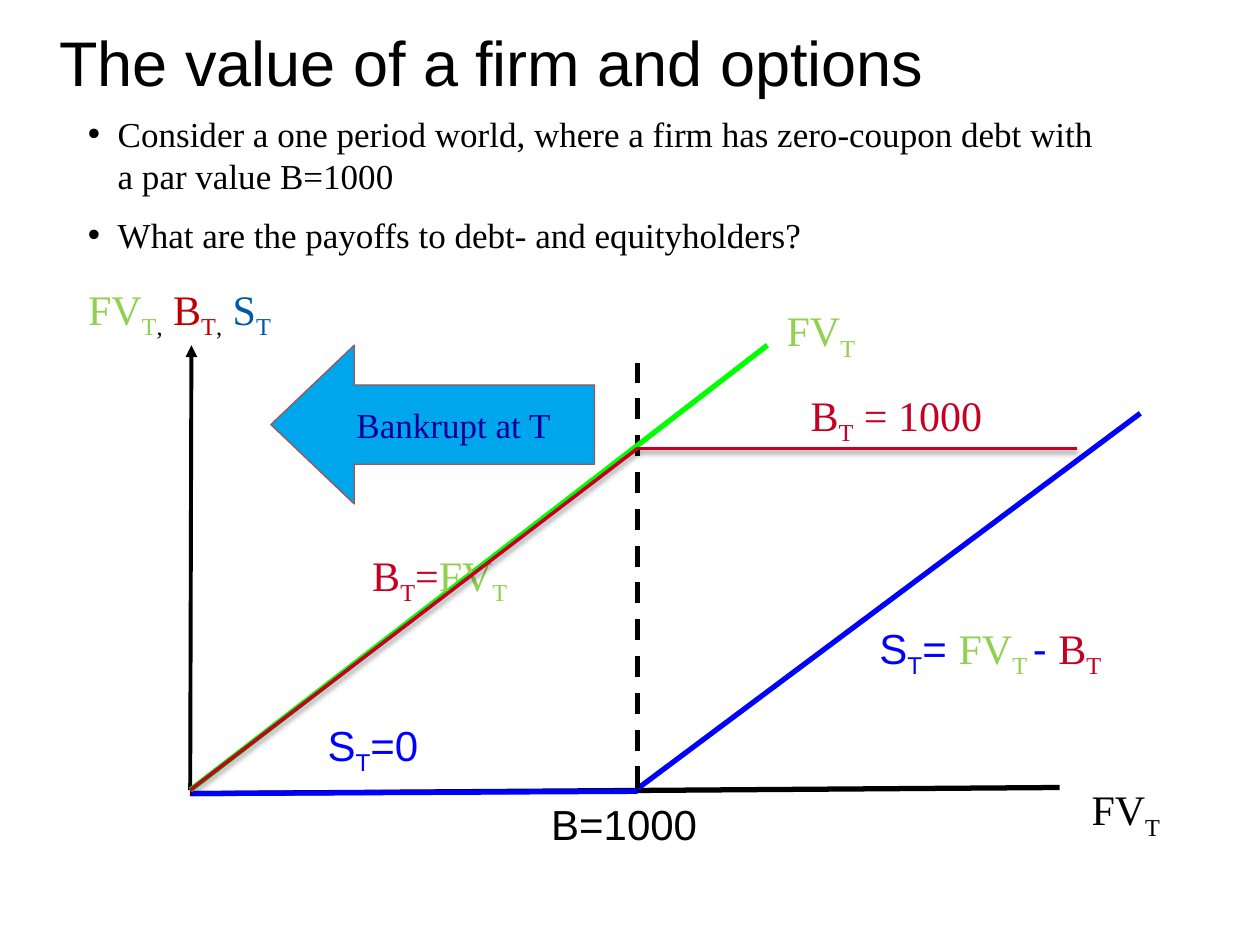
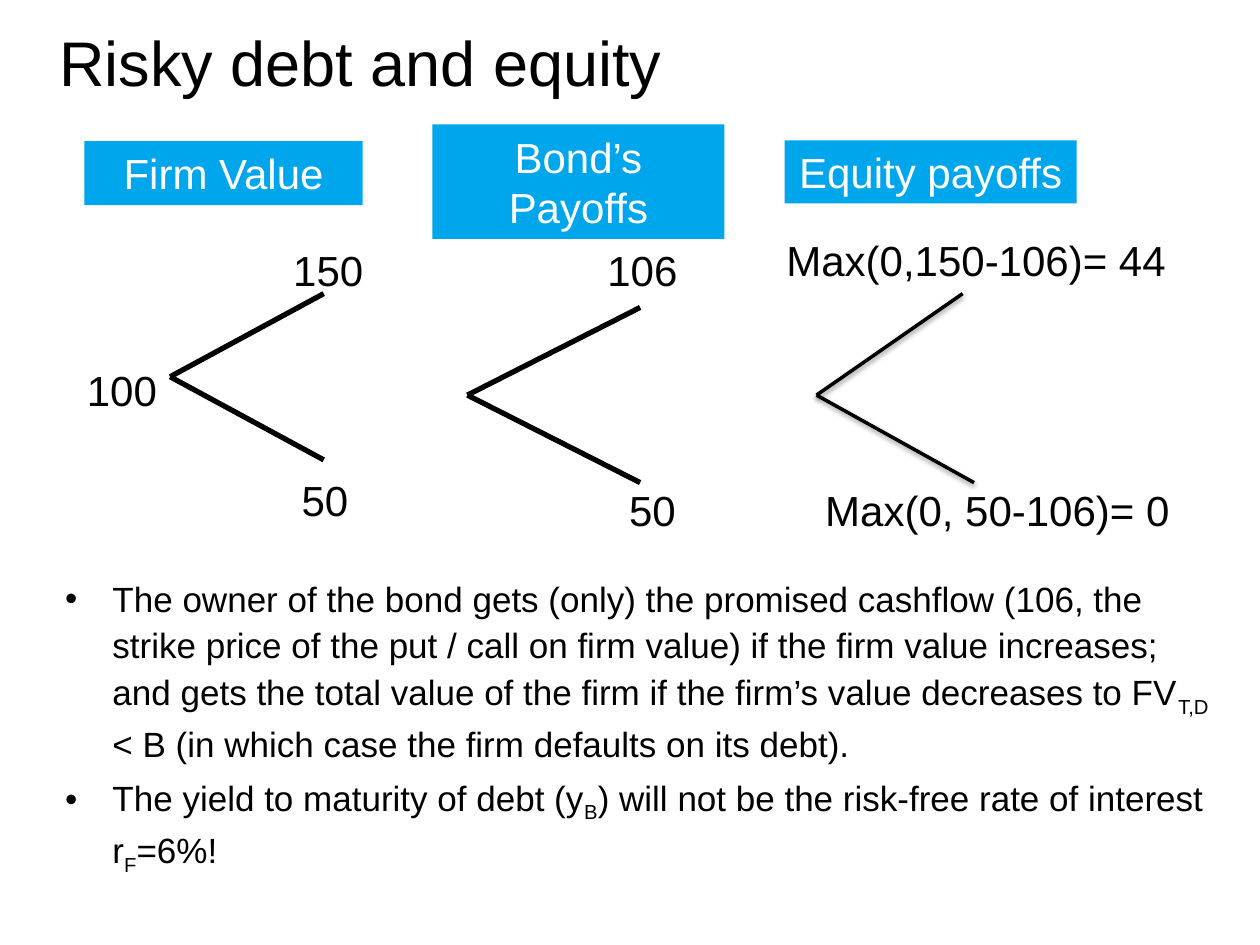
from lxml import etree
from pptx import Presentation
from pptx.dml.color import RGBColor
from pptx.enum import dml, shapes, text
from pptx.oxml.ns import qn
from pptx.util import Pt

HUES = {"ink": "000000", "paper": "FFFFFF", "sky": "00A6EB", "navy": "000099",
        "blue": "0000FF", "green": "00FF00", "lime": "92D050", "red": "C60023",
        "brick": "C00000", "steel": "005AA9", "rust": "A45355"}
SANS, SERIF = "Arial", "Times New Roman"
TITLE = (26.6, 9.4, 657.4, 51.8)


def hue(name):
    return RGBColor.from_string(HUES[name])


def style(font, size, face, color):
    font.size, font.name = Pt(size), face
    font.color.rgb = hue(color)


def write(para, parts, size):
    """Fill a paragraph from (text, colour, font) parts; text between bars is subscript."""
    for words, color, face in parts:
        for i, bit in enumerate(words.split("|")):
            if bit:
                run = para.add_run()
                run.text = bit
                style(run.font, size, face, color)
                if i % 2:
                    run._r.get_or_add_rPr().set("baseline", "-25000")


def label(slide, x, y, w, *parts):
    frame = slide.shapes.add_textbox(Pt(x), Pt(y), Pt(w), Pt(36)).text_frame
    frame.word_wrap = False
    para = frame.paragraphs[0]
    para.alignment = text.PP_ALIGN.CENTER
    write(para, parts, 24)


def block(slide, kind, box, words, size, face, color):
    shape = slide.shapes.add_shape(kind, *map(Pt, box))
    shape.shadow.inherit = False
    shape.fill.solid()
    shape.fill.fore_color.rgb = hue("sky")
    shape.line.fill.background()
    frame = shape.text_frame
    frame.text = words
    frame.vertical_anchor = text.MSO_ANCHOR.MIDDLE
    para = frame.paragraphs[0]
    para.alignment = text.PP_ALIGN.CENTER
    style(para.runs[0].font, size, face, color)
    return shape


def line(slide, x, y, start, end, color="ink", width=3, shade=False):
    """Draw a line between two points given relative to (x, y)."""
    wire = slide.shapes.add_connector(
        shapes.MSO_CONNECTOR.STRAIGHT, Pt(x + start[0]), Pt(y + start[1]),
        Pt(x + end[0]), Pt(y + end[1]))
    wire.line.color.rgb = hue(color)
    wire.line.width = Pt(width)
    fx = etree.SubElement(wire._element.spPr, qn("a:effectLst"))
    if shade:
        cast = etree.SubElement(fx, qn("a:outerShdw"), blurRad=str(Pt(3.1)),
                                dist=str(Pt(1.6)), dir="5400000", rotWithShape="0")
        tint = etree.SubElement(cast, qn("a:srgbClr"), val=HUES["ink"])
        etree.SubElement(tint, qn("a:alpha"), val="38000")
    return wire


def bullets(slide, box, items, face, indent, pitch, gap):
    frame = slide.shapes.add_textbox(*map(Pt, box)).text_frame
    frame.word_wrap = True
    for i, words in enumerate(items):
        para = frame.add_paragraph() if i else frame.paragraphs[0]
        props = para._p.get_or_add_pPr()
        props.set("marL", str(Pt(indent)))
        props.set("indent", str(-Pt(indent)))
        etree.SubElement(props, qn("a:buFont"), typeface=SANS)
        etree.SubElement(props, qn("a:buChar"), char="•")
        para.line_spacing = pitch
        para.space_before = Pt(gap if i else 0)
        write(para, [(words, "ink", face)], 20)


def titled(deck, words):
    slide = deck.slides.add_slide(deck.slide_layouts[5])
    head = slide.shapes.title
    head.left, head.top, head.width, head.height = map(Pt, TITLE)
    frame = head.text_frame
    frame.text = words
    frame.word_wrap = True
    frame.auto_size = text.MSO_AUTO_SIZE.NONE
    frame.vertical_anchor = text.MSO_ANCHOR.MIDDLE
    para = frame.paragraphs[0]
    para.alignment = text.PP_ALIGN.LEFT
    style(para.runs[0].font, 36, SANS, "ink")
    return slide


def payoff(slide, x, y, h):
    """Plot the payoffs; (x, y) is the top of the upright axis and h its height."""
    par, cap = 255.6, 59
    zero, kink = (0, h), (par, cap)

    line(slide, x, y, (0, h + 2), (496.8, h - 1.5))
    line(slide, x, y, (par, h - 0.8), (542.9, 38.9), "blue")
    dash = line(slide, x, y, (par, h - 1.5), (par, 10.1))
    dash.line.dash_style = dml.MSO_LINE.DASH
    line(slide, x, y, (par, h + 0.7), (0.7, h + 2), "blue")

    arrow = block(slide, shapes.MSO_SHAPE.LEFT_ARROW, (x + 46.1, y, 185, 90.7),
                  "Bankrupt at T", 20, SERIF, "navy")
    arrow.adjustments[0], arrow.adjustments[1] = 0.5, 0.525
    arrow.text_frame.word_wrap = False
    arrow.line.color.rgb = hue("rust")
    arrow.line.width = Pt(0.75)

    axis = line(slide, x, y, zero, (0.7, 0), width=2.25)
    etree.SubElement(axis.line._get_or_add_ln(), qn("a:tailEnd"), type="triangle")
    line(slide, x, y, zero, (329.8, 0), "green")

    firm, debt = ("FV|T|", "lime", SERIF), ("B|T|", "red", SERIF)
    comma = ("|,| ", "ink", SERIF)
    tags = [
        (198.7, 255.6, 98.6, ("B=1000", "ink", SANS)),
        (332.7, -26.6, 55.4, firm),
        (368.7, 154.8, 177.1, ("S|T|= ", "blue", SANS), ("FV|T |", "lime", SERIF),
         ("- ", "blue", SANS), debt),
        (43.9, 210.2, 121, ("S|T|=0", "blue", SANS)),
        (95.1, 113, 95, ("B|T|=", "red", SERIF), firm),
        (346.3, 21.6, 114.5, ("B|T| = 1000", "red", SERIF)),
        (493.2, 246.9, 82.8, ("FV|T|", "ink", SERIF)),
        (-82.1, -38.9, 151.9, firm, comma, ("B|T|", "brick", SERIF), comma,
         ("S|T|", "steel", SERIF)),
    ]
    for dx, dy, w, *parts in tags:
        label(slide, x + dx, y + dy, w, *parts)

    for start, end in ((kink, (506.9, cap)), (zero, kink)):
        line(slide, x, y, start, end, "red", 2, True)


def tree(slide, x, y, head, fork, tags, width=3, shade=False):
    """Draw a headed fork: head is (text, top, width, height), fork is (root, up, down)."""
    words, top, w, h = head
    bar = block(slide, shapes.MSO_SHAPE.RECTANGLE, (x, y + top, w, h),
                words, 24, SANS, "paper")
    bar.text_frame.word_wrap = True
    root, *tips = fork
    for tip in tips:
        line(slide, x, y, root, tip, "ink", width, shade)
    for words, mid, dy in tags:
        w = 13 * len(words) + 30
        label(slide, x + mid - w / 2, y + dy, w, (words, "ink", SANS))


def options(deck):
    slide = titled(deck, "The value of a firm and options")
    payoff(slide, 108.7, 197.3, 254.2)
    bullets(slide, (43.2, 60.5, 594.7, 128), [
        "Consider a one period world, where a firm has zero-coupon debt with "
        "a par value B=1000",
        "What are the payoffs to debt- and equityholders?",
    ], SERIF, 17, 1, 10)


def risky(deck):
    slide = titled(deck, "Risky debt and equity")
    bullets(slide, (30.2, 324, 669.6, 190.8), [
        "The owner of the bond gets (only) the promised cashflow (106, the strike "
        "price of the put / call on firm value) if the firm value increases; and "
        "gets the total value of the firm if the firm’s value decreases to FV|T,D| "
        "< B (in which case the firm defaults on its debt).",
        "The yield to maturity of debt (y|B|) will not be the risk-free rate of "
        "interest r|F|=6%!",
    ], SANS, 27, 1.1, 4)
    top = 71
    tree(slide, 48.2, top, ("Firm Value", 9.7, 159.1, 36.5),
         ((49, 144.3), (136.8, 96.8), (136.8, 191.8)),
         [("150", 139.4, 65.1), ("100", 21.5, 133.9), ("50", 137.5, 196.8)])
    tree(slide, 247, top, ("Bond’s Payoffs", 0, 167, 65.5),
         ((20.1, 154.8), (118.8, 104.7), (118.8, 204.8)),
         [("106", 120.1, 65.1), ("50", 125.8, 202.6)])
    tree(slide, 448.3, top, ("Equity payoffs", 9.3, 167, 36),
         ((18.3, 154.8), (101.8, 96.8), (108.3, 204.8)),
         [("Max(0,150-106)= 44", 109.4, 59.3), ("Max(0, 50-106)= 0", 121.6, 202.6)],
         2, True)


def main():
    deck = Presentation()
    deck.slide_width, deck.slide_height = Pt(720), Pt(540)
    options(deck)
    risky(deck)
    deck.save("out.pptx")


if __name__ == "__main__":
    main()
